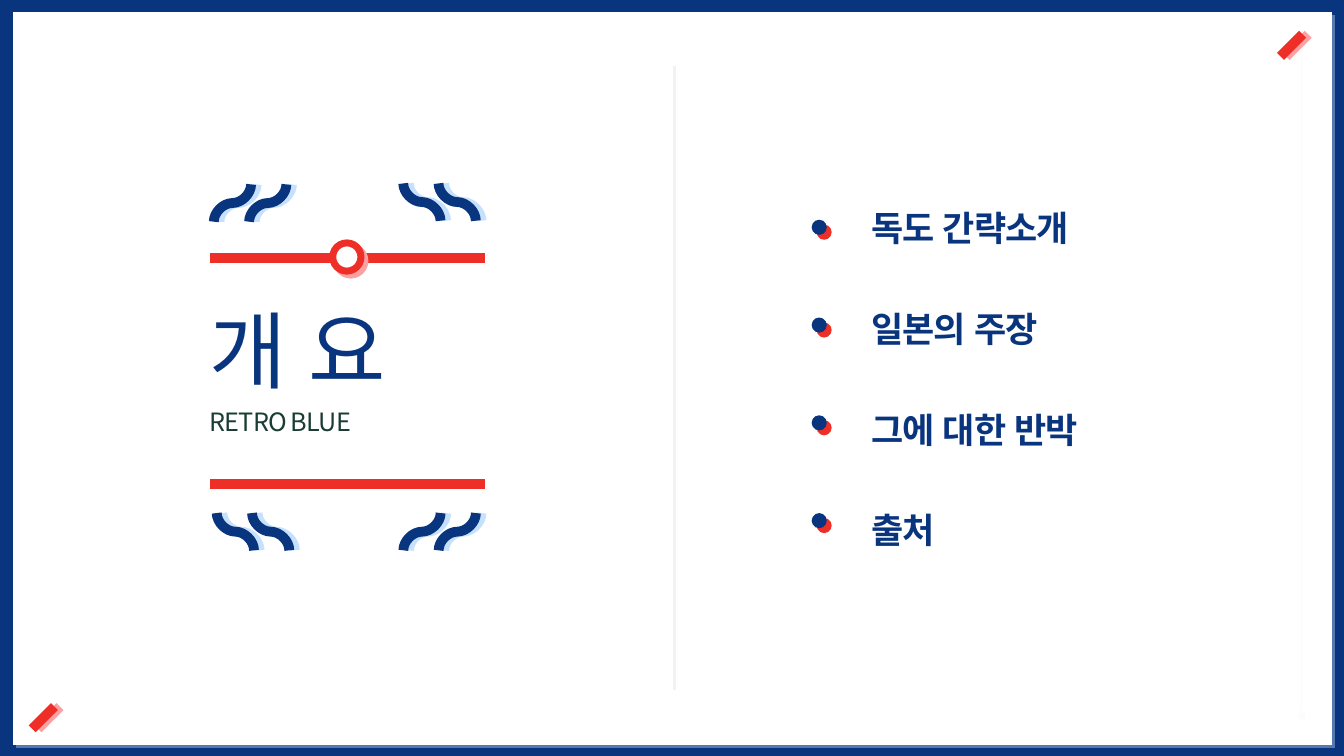
from lxml import etree
from pptx import Presentation
from pptx import util as u
from pptx.dml.color import RGBColor
from pptx.enum import lang, shapes, text
from pptx.oxml.ns import qn

FONT = "Noto Sans CJK KR"
NAVY, RED, WHITE, GRAY, GREEN = "09347E", "EE2F27", "FFFFFF", "F2F2F2", "1B3C33"
SKY, PINK = "C6E1FE", "FCA0A1"

TITLE = "개 요"
SUBTITLE = "RETRO BLUE"
TOPICS = ["독도 간략소개", "일본의 주장", "그에 대한 반박", "출처"]

LEFT, WIDTH = 2.08, 2.73            # column of the title
RULES = [2.56, 4.8]
WAVE, WAVE_STEP = 0.37, 0.35
WAVE_PAIRS = [                      # left, top, rising to the right
    (2.12, 1.83, True), (4, 1.82, False),
    (2.15, 5.09, False), (4, 5.09, True),
]
BULLET_X, BULLET_Y, BULLET_STEP, BULLET = 8.05, 2.18, 0.97, 0.15
CORNER_DASHES = [(12.92, 0.34), (0.54, 7.01)]
DASH = 0.22
LINE_PT = 36                        # line height of a topic, and the gap between topics

prs = Presentation()
prs.slide_width, prs.slide_height = u.Inches(13.33), u.Inches(7.5)
s = prs.slides.add_slide(prs.slide_layouts[5])


def rgb(color):
    return RGBColor.from_string(color)


def add_xml(parent, tag, **attributes):
    values = {name: str(value) for name, value in attributes.items()}
    return etree.SubElement(parent, qn(tag), values)


def set_shadow(sp, color=None, distance=0, angle=0, opacity=100):
    """Replace the theme shadow by a sharp one, or by none."""
    sp_pr = sp._element.spPr
    effects = sp_pr.find(qn("a:effectLst"))
    if effects is None:
        effects = add_xml(sp_pr, "a:effectLst")
    if color:
        outer = add_xml(effects, "a:outerShdw", blurRad=0, dist=u.Pt(distance),
                        dir=angle * 60000, algn="tl", rotWithShape=0)
        shade = add_xml(outer, "a:srgbClr", val=color)
        add_xml(shade, "a:alpha", val=opacity * 1000)


def add_line(x1, y1, x2, y2, color, width, shadow=(), kind=shapes.MSO_CONNECTOR.STRAIGHT):
    line = s.shapes.add_connector(kind, *map(u.Inches, (x1, y1, x2, y2)))
    line.line.color.rgb = rgb(color)
    line.line.width = u.Pt(width)
    set_shadow(line, *shadow)
    return line


def add_wave(x, y, rising):
    start, end = (x, x + WAVE) if rising else (x + WAVE, x)
    wave = add_line(start, y, end, y + WAVE, NAVY, 7, (SKY, 4),
                    shapes.MSO_CONNECTOR.CURVE)
    wave._element.spPr.find(qn("a:xfrm")).set("rot", str((90 if rising else 270) * 60000))


def add_filled(kind, x, y, w, h, color, shadow, outline=None):
    sp = s.shapes.add_shape(kind, *map(u.Inches, (x, y, w, h)))
    sp.fill.solid()
    sp.fill.fore_color.rgb = rgb(color)
    if outline:
        sp.line.color.rgb = rgb(outline)
        sp.line.width = u.Pt(5)
    else:
        sp.line.fill.background()
    sp.shadow.inherit = False
    set_shadow(sp, *shadow)


def write(sp, box, lines, size, color, bold=False, align=None):
    sp.left, sp.top, sp.width, sp.height = map(u.Inches, box)
    tf = sp.text_frame
    tf.word_wrap = True
    tf.auto_size = text.MSO_AUTO_SIZE.NONE
    tf.vertical_anchor = text.MSO_ANCHOR.MIDDLE
    tf.margin_left = tf.margin_right = tf.margin_top = tf.margin_bottom = 0
    for i, line in enumerate(lines):
        p = tf.add_paragraph() if i else tf.paragraphs[0]
        p.alignment = align
        p.line_spacing = 1.2
        r = p.add_run()
        r.text = line
        r.font.name, r.font.size, r.font.bold = FONT, u.Pt(size), bold
        r.font.color.rgb = rgb(color)
        r.font.language_id = lang.MSO_LANGUAGE_ID.KOREAN
        r_pr = r._r.get_or_add_rPr()
        r_pr.set("spc", "-60")
        add_xml(r_pr, "a:ea", typeface=FONT)
    return tf


s.background.fill.solid()
s.background.fill.fore_color.rgb = rgb(NAVY)
add_filled(shapes.MSO_SHAPE.RECTANGLE, 0.13, 0.12, 13.08, 7.27, WHITE, (SKY, 3, 45, 40))

for y in RULES:
    add_line(LEFT, y, LEFT + WIDTH, y, RED, 7)
add_filled(shapes.MSO_SHAPE.OVAL, 3.3, 2.41, 0.28, 0.28, WHITE, (PINK, 4, 45), RED)

edge = add_line(12.91, 0.34, 12.91, 7.1, GRAY, 1)
edge_ln = edge._element.spPr.find(qn("a:ln"))
add_xml(edge_ln.find(".//" + qn("a:srgbClr")), "a:alpha", val=22000)
add_xml(edge_ln, "a:headEnd", type="oval")
add_xml(edge_ln, "a:tailEnd", type="oval")

for x, y, rising in WAVE_PAIRS:
    for i in range(2):
        add_wave(x + i * WAVE_STEP, y, rising)
add_line(6.69, 0.65, 6.69, 6.85, GRAY, 2.5)

justify = text.PP_ALIGN.JUSTIFY
title = s.shapes.title
s.shapes._spTree.append(title._element)  # in front of the white panel
write(title, (LEFT, 3.05, WIDTH, 0.62), [TITLE], 60, NAVY, align=justify)
write(s.shapes.add_textbox(0, 0, 0, 0), (LEFT, 3.98, WIDTH, 0.34), [SUBTITLE],
      18, GREEN, align=justify)
topics = write(s.shapes.add_textbox(0, 0, 0, 0), (8.64, 1.83, 2.62, 3.77), TOPICS,
               25, NAVY, bold=True, align=text.PP_ALIGN.LEFT)
for i, p in enumerate(topics.paragraphs):
    p.line_spacing = u.Pt(LINE_PT)
    p.space_before = u.Pt(LINE_PT if i else 0)
    add_filled(shapes.MSO_SHAPE.OVAL, BULLET_X, BULLET_Y + i * BULLET_STEP,
               BULLET, BULLET, NAVY, (RED, 5, 45))

for x, y in CORNER_DASHES:
    add_line(x, y, x - DASH, y + DASH, RED, 7, (PINK, 4))

prs.save("out.pptx")
